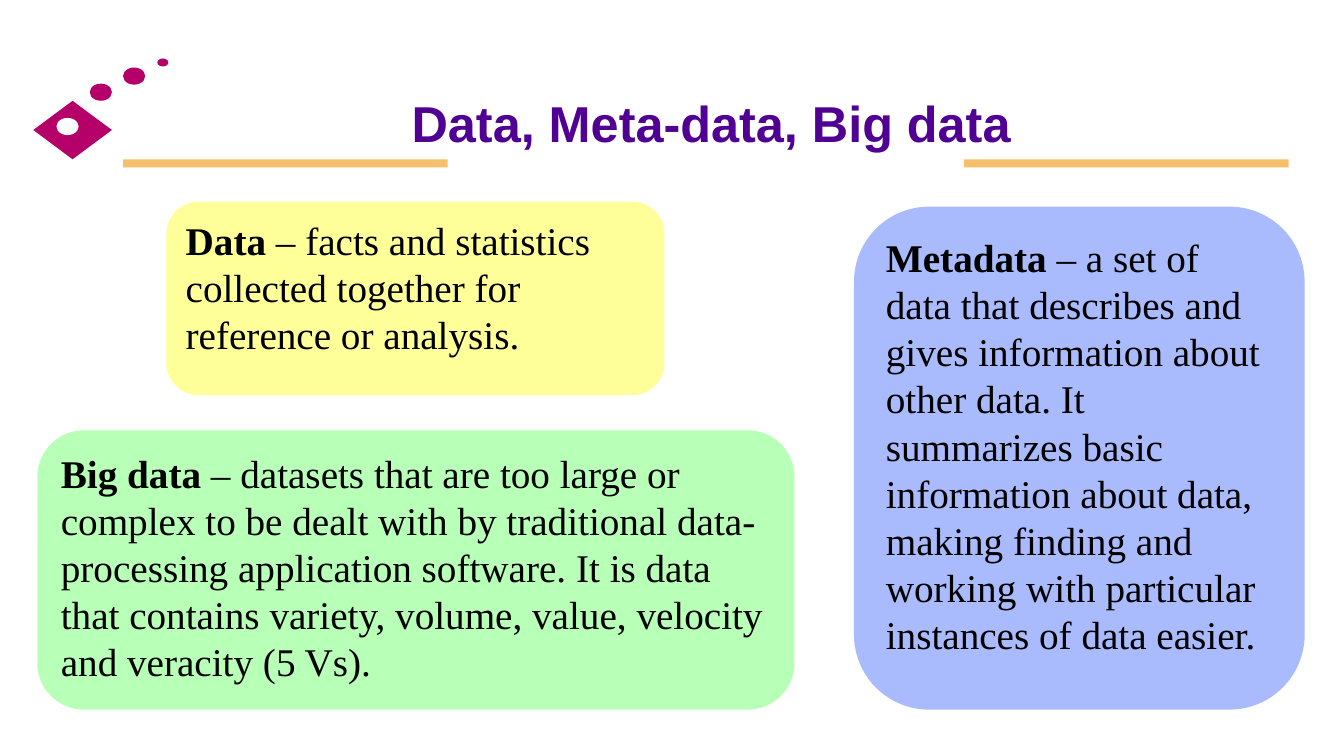
from pptx import Presentation
from pptx import util as u
from pptx.dml.color import RGBColor
from pptx.enum import shapes, text

PX = 9144  # EMU per px, 100 px to the inch
COLOURS = {
    "title": "500093",
    "body": "000000",
    "rule": "F6BF69",
    "emblem": "B50069",
    "hole": "FFFFFF",
    "data": "FFFF99",
    "big_data": "B8FFB8",
    "metadata": "A9BBFD",
}
SHAPE = shapes.MSO_SHAPE


class DefinitionSlide:
    def __init__(self, deck):
        self.slide = deck.slides.add_slide(deck.slide_layouts[5])

    def style(self, run, font, size, colour, bold):
        run.font.name = font
        run.font.size = u.Pt(size)
        run.font.bold = bold
        run.font.color.rgb = RGBColor.from_string(COLOURS[colour])

    def block(self, preset, box, colour):
        """Add a plain filled shape; box is left, top, width, height."""
        block = self.slide.shapes.add_shape(preset, *(n * PX for n in box))
        block.shadow.inherit = False
        block.fill.solid()
        block.fill.fore_color.rgb = RGBColor.from_string(COLOURS[colour])
        block.line.fill.background()
        return block

    def title(self, box, wording):
        title = self.slide.shapes.title
        title.left, title.top, title.width, title.height = (n * PX for n in box)
        frame = title.text_frame
        frame.text = wording
        frame.word_wrap = True
        frame.auto_size = text.MSO_AUTO_SIZE.NONE
        frame.vertical_anchor = text.MSO_ANCHOR.MIDDLE
        heading = frame.paragraphs[0]
        heading.alignment = text.PP_ALIGN.CENTER
        self.style(heading.runs[0], "Arial", 36, "title", True)

    def definition(self, box, colour, term, meaning):
        """Add a rounded card with a bold term and its meaning."""
        frame = self.block(SHAPE.ROUNDED_RECTANGLE, box, colour).text_frame
        frame.word_wrap = True
        frame.vertical_anchor = text.MSO_ANCHOR.TOP
        paragraph = frame.paragraphs[0]
        paragraph.alignment = text.PP_ALIGN.LEFT
        for wording, bold in ((term, True), (f" – {meaning}", False)):
            run = paragraph.add_run()
            run.text = wording
            self.style(run, "Times New Roman", 28, "body", bold)


def main():
    deck = Presentation()
    deck.slide_width, deck.slide_height = 1333 * PX, 750 * PX
    page = DefinitionSlide(deck)

    for rule_left in (122, 956):
        page.block(SHAPE.RECTANGLE, (rule_left, 158, 322, 8), "rule")
    page.block(SHAPE.DIAMOND, (33, 100, 78, 58), "emblem")
    for dot, colour in (
        ((56, 117, 22, 17), "hole"),
        ((89, 83, 22, 17), "emblem"),
        ((122, 67, 22, 17), "emblem"),
        ((156, 58, 11, 8), "emblem"),
    ):
        page.block(SHAPE.OVAL, dot, colour)

    page.title((111, 67, 1189, 108), "Data, Meta-data, Big data")
    page.definition(
        (37, 427, 751, 277), "big_data", "Big data",
        "datasets that are too large or complex to be dealt with by traditional "
        "data-processing application software. It is data that contains variety, "
        "volume, value, velocity and veracity (5 Vs).")
    page.definition(
        (165, 200, 494, 192), "data", "Data",
        "facts and statistics collected together for reference or analysis.")
    page.definition(
        (847, 205, 447, 499), "metadata", "Metadata",
        "a set of data that describes and gives information about other data. "
        "It summarizes basic information about data, making finding and working "
        "with particular instances of data easier.")
    deck.save("out.pptx")


if __name__ == "__main__":
    main()
